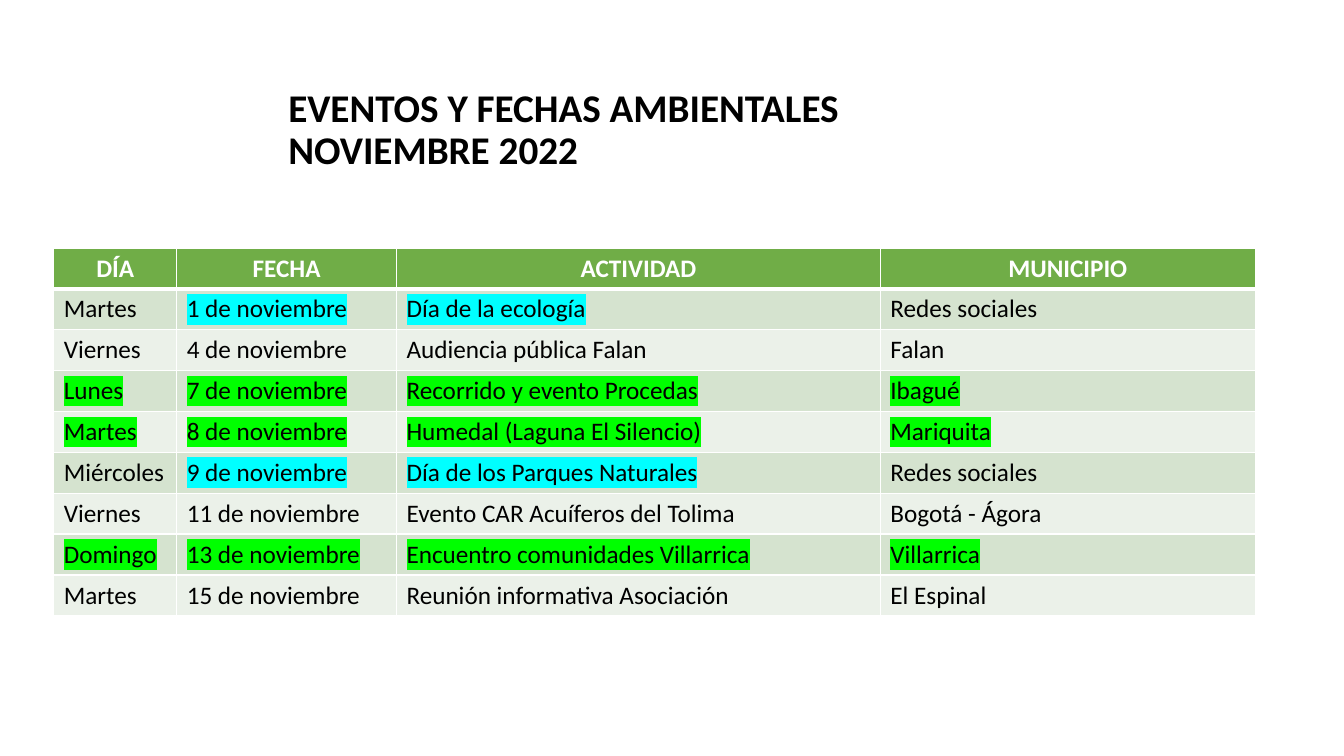
from dataclasses import dataclass

from lxml import etree
from pptx import Presentation
from pptx.dml.color import RGBColor
from pptx.enum.text import MSO_ANCHOR, MSO_AUTO_SIZE, PP_ALIGN
from pptx.oxml.ns import qn
from pptx.util import Pt

LEFT, CENTER = PP_ALIGN.LEFT, PP_ALIGN.CENTER
MIDDLE = MSO_ANCHOR.MIDDLE
NO_AUTOFIT = MSO_AUTO_SIZE.NONE
TITLE_ONLY_LAYOUT = 5


@dataclass(frozen=True)
class Theme:
    """Colours, font and type sizes of the slide."""
    font: str = "Calibri"
    title_size: int = 28
    table_size: int = 18
    text: str = "000000"
    white: str = "FFFFFF"
    header: str = "70AD47"
    bands: tuple = ("D5E3CF", "EBF1E9")
    social: str = "00FFFF"
    field: str = "00FF00"


THEME = Theme()

TITLE = "EVENTOS Y FECHAS AMBIENTALES\vNOVIEMBRE 2022"
HEADERS = ("DÍA", "FECHA", "ACTIVIDAD", "MUNICIPIO")
COLUMN_WIDTHS = (87.84, 157, 345.6, 267.84)
ROW_HEIGHT = 29.2

PLAIN = (None,) * 4
SOCIAL = (None, THEME.social, THEME.social, None)
FIELD = (THEME.field,) * 4
EVENTS = (
    (("Martes", "1 de noviembre", "Día de la ecología", "Redes sociales"), SOCIAL),
    (("Viernes", "4 de noviembre", "Audiencia pública Falan", "Falan"), PLAIN),
    (("Lunes", "7 de noviembre", "Recorrido y evento Procedas", "Ibagué"), FIELD),
    (("Martes", "8 de noviembre", "Humedal (Laguna El Silencio)", "Mariquita"), FIELD),
    (("Miércoles", "9 de noviembre", "Día de los Parques Naturales", "Redes sociales"), SOCIAL),
    (("Viernes", "11 de noviembre", "Evento CAR Acuíferos del Tolima", "Bogotá - Ágora"), PLAIN),
    (("Domingo", "13 de noviembre", "Encuentro comunidades Villarrica", "Villarrica"), FIELD),
    (("Martes", "15 de noviembre", "Reunión informativa Asociación", "El Espinal"), PLAIN),
)


def format_runs(paragraph, size, color, bold, highlight=None):
    """Format every run of a paragraph, with an optional highlight."""
    for run in paragraph.runs:
        font = run.font
        font.name, font.size, font.bold = THEME.font, Pt(size), bold
        font.color.rgb = RGBColor.from_string(color)
        if highlight:
            mark = etree.Element(qn("a:highlight"))
            etree.SubElement(mark, qn("a:srgbClr"), val=highlight)
            run._r.rPr.find(qn("a:solidFill")).addnext(mark)


def set_borders(cell, top=1, bottom=1):
    """Give a cell white borders of the given widths in points."""
    properties = cell._tc.get_or_add_tcPr()
    for side, width in (("L", 1), ("R", 1), ("T", top), ("B", bottom)):
        line = etree.SubElement(properties, qn(f"a:ln{side}"), w=str(Pt(width)))
        fill = etree.SubElement(line, qn("a:solidFill"))
        etree.SubElement(fill, qn("a:srgbClr"), val=THEME.white)


def fill_cell(cell, text, fill, color, bold=False, alignment=LEFT, highlight=None):
    """Write and format one table cell."""
    cell.fill.solid()
    cell.fill.fore_color.rgb = RGBColor.from_string(fill)
    cell.text_frame.text = text
    paragraph = cell.text_frame.paragraphs[0]
    paragraph.alignment = alignment
    format_runs(paragraph, THEME.table_size, color, bold, highlight)


def add_title(slide, left, top, width, height):
    """Place the slide title in the given box."""
    title = slide.shapes.title
    title.left, title.top, title.width, title.height = map(Pt, (left, top, width, height))
    frame = title.text_frame
    frame.text = TITLE
    frame.word_wrap, frame.auto_size = True, NO_AUTOFIT
    frame.vertical_anchor = MIDDLE
    paragraph = frame.paragraphs[0]
    paragraph.alignment, paragraph.line_spacing = LEFT, 0.9
    format_runs(paragraph, THEME.title_size, THEME.text, True)


def add_events_table(slide, left, top):
    """Place the calendar of events with its corner at the given point."""
    row_count = len(EVENTS) + 1
    table = slide.shapes.add_table(
        row_count, len(HEADERS), Pt(left), Pt(top),
        Pt(sum(COLUMN_WIDTHS)), Pt(row_count * ROW_HEIGHT)).table
    for column, width in zip(table.columns, COLUMN_WIDTHS):
        column.width = Pt(width)
    for row in table.rows:
        row.height = Pt(ROW_HEIGHT)
    for cell, text in zip(table.rows[0].cells, HEADERS):
        set_borders(cell, bottom=3)
        fill_cell(cell, text, THEME.header, THEME.white, True, CENTER)
    for index, (texts, highlights) in enumerate(EVENTS):
        for cell, text, highlight in zip(table.rows[index + 1].cells, texts, highlights):
            set_borders(cell, top=1 if index else 3)
            fill_cell(cell, text, THEME.bands[index % 2], THEME.text, highlight=highlight)


def main():
    """Build the slide and save the presentation."""
    presentation = Presentation()
    presentation.slide_width, presentation.slide_height = Pt(960), Pt(540)
    slide = presentation.slides.add_slide(presentation.slide_layouts[TITLE_ONLY_LAYOUT])
    add_title(slide, 198.72, 65.5, 687.6, 56.16)
    add_events_table(slide, 38.4, 177.12)
    presentation.save("out.pptx")


if __name__ == "__main__":
    main()
